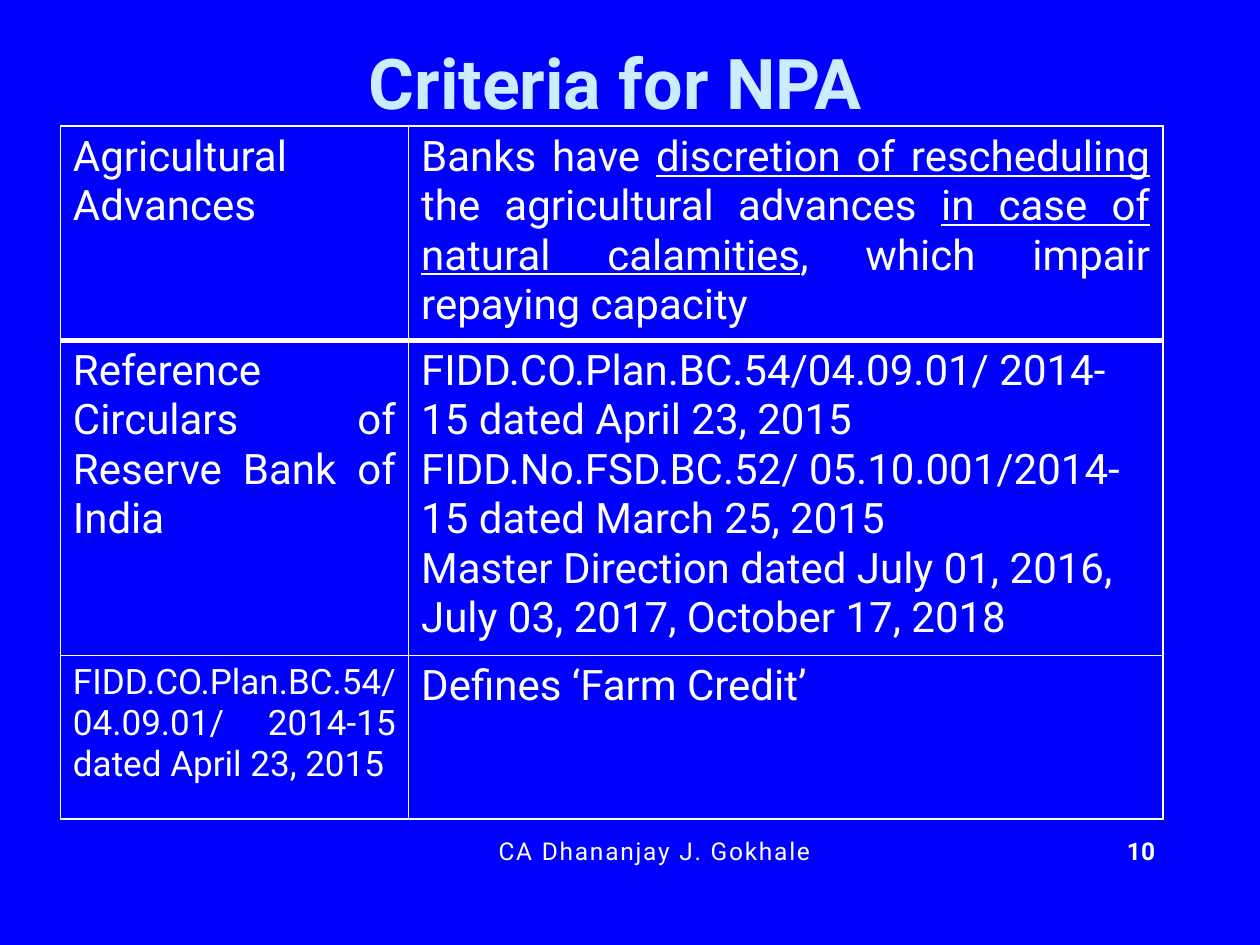
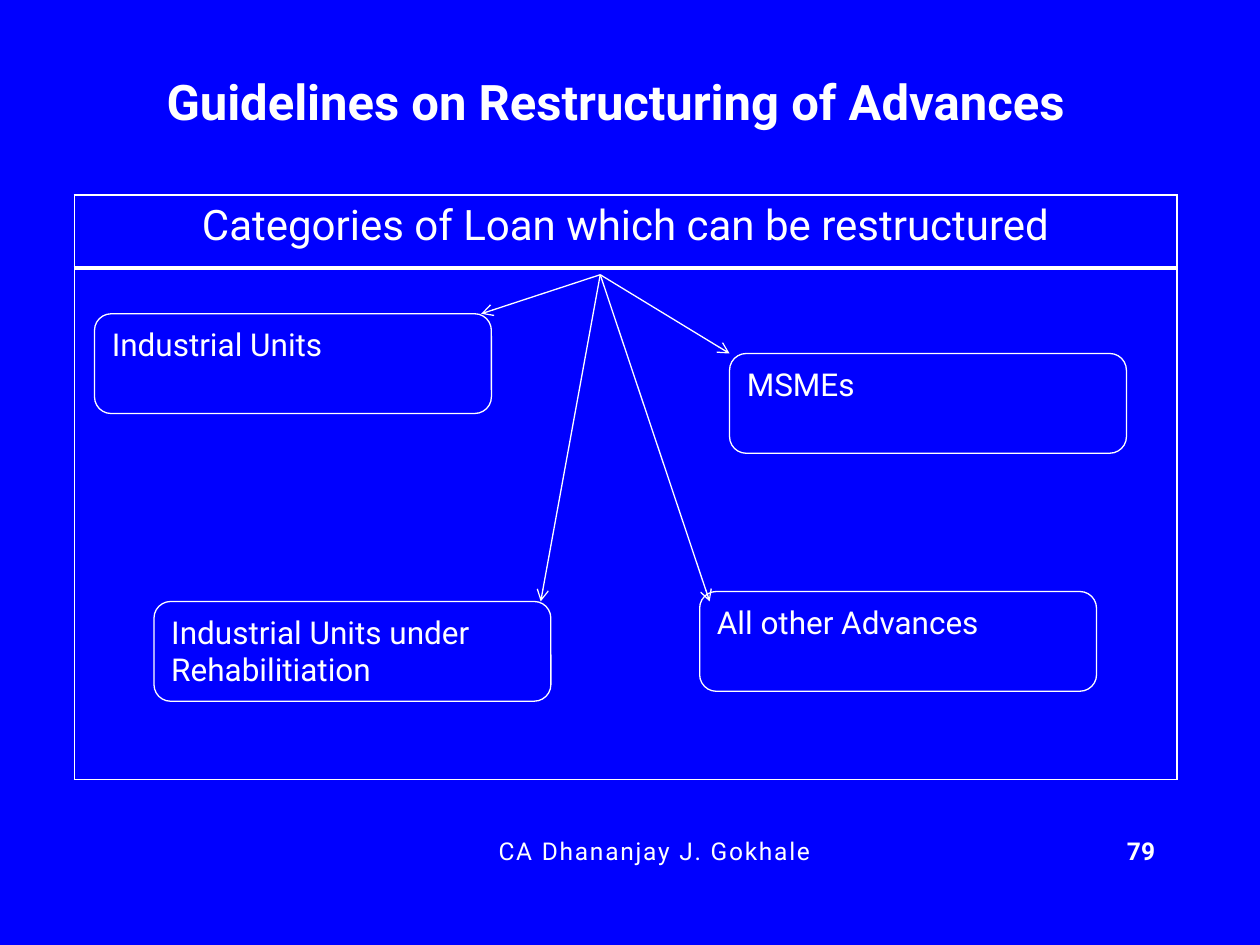
from lxml import etree
from pptx import Presentation
from pptx.dml.color import RGBColor
from pptx.enum.shapes import MSO_CONNECTOR, MSO_SHAPE
from pptx.enum.text import MSO_ANCHOR, MSO_AUTO_SIZE, PP_ALIGN
from pptx.oxml.ns import qn
from pptx.util import Pt

LEFT, CENTER, JUSTIFY = PP_ALIGN.LEFT, PP_ALIGN.CENTER, PP_ALIGN.JUSTIFY
TOP, MIDDLE = MSO_ANCHOR.TOP, MSO_ANCHOR.MIDDLE
NO_AUTOFIT = MSO_AUTO_SIZE.NONE
ROUNDED, STRAIGHT = MSO_SHAPE.ROUNDED_RECTANGLE, MSO_CONNECTOR.STRAIGHT
TITLE_ONLY = 5

FONT = "Roboto"
BLUE, WHITE, PALE = "0000FF", "FFFFFF", "CCECFF"
FOOTER = "CA Dhananjay J. Gokhale"
THIN, THICK, FINE = 1, 3, 0.75
CATEGORY_SIZE = (226.8, 57)


def color(hex_code):
    return RGBColor.from_string(hex_code)


def write(frame, paragraphs, size=24, ink=WHITE, bold=False, align=LEFT,
          anchor=TOP, spacing=0):
    """Paragraphs are strings, or lists of (text, underlined) spans."""
    frame.word_wrap = True
    frame.vertical_anchor = anchor
    for index, spans in enumerate(paragraphs):
        para = frame.paragraphs[0] if index == 0 else frame.add_paragraph()
        para.alignment = align
        if isinstance(spans, str):
            spans = [(spans, False)]
        for text, underlined in spans:
            span = para.add_run()
            span.text = text
            font = span.font
            font.name, font.size, font.bold = FONT, Pt(size), bold
            font.color.rgb = color(ink)
            if underlined:
                font.underline = True
            if spacing:
                span._r.get_or_add_rPr().set("spc", str(spacing * 100))


def add_text(page, text, left, top, width, height, **style):
    box = page.shapes.add_textbox(Pt(left), Pt(top), Pt(width), Pt(height))
    write(box.text_frame, [text], **style)


def add_page(deck, title, number, title_height, **title_style):
    """Slide with the shared title style, footer and page number."""
    page = deck.slides.add_slide(deck.slide_layouts[TITLE_ONLY])
    heading = page.shapes.title
    heading.left, heading.top = Pt(36.7), Pt(21)
    heading.width, heading.height = Pt(630), Pt(title_height)
    heading.text_frame.auto_size = NO_AUTOFIT
    write(heading.text_frame, [title], bold=True, align=CENTER, anchor=MIDDLE,
          **title_style)
    add_text(page, FOOTER, 116, 474, 516, 28, size=14, align=CENTER, spacing=1)
    add_text(page, str(number), 632, 474, 40, 30, size=14, bold=True,
             align=CENTER)
    return page


def set_borders(cell, **widths):
    properties = cell._tc.get_or_add_tcPr()
    for side in "LRTB":
        line = etree.SubElement(properties, qn(f"a:ln{side}"),
                                w=str(Pt(widths.get(side, THIN))))
        fill = etree.SubElement(line, qn("a:solidFill"))
        etree.SubElement(fill, qn("a:srgbClr"), val=WHITE)


def add_grid(page, left, top, widths, heights, rows):
    """Outlined table with a thick rule under its first row.

    Each cell is (paragraphs, text format).
    """
    frame = page.shapes.add_table(len(heights), len(widths), Pt(left), Pt(top),
                                  Pt(sum(widths)), Pt(sum(heights)))
    table = frame.table
    table.first_row = table.horz_banding = False
    for column, width in zip(table.columns, widths):
        column.width = Pt(width)
    for index, (row, height, contents) in enumerate(
            zip(table.rows, heights, rows)):
        row.height = Pt(height)
        rules = {0: {"B": THICK}, 1: {"T": THICK}}.get(index, {})
        for cell, (paragraphs, style) in zip(row.cells, contents):
            set_borders(cell, **rules)
            cell.fill.background()
            write(cell.text_frame, paragraphs, **style)


def add_category(page, text, left, top):
    width, height = CATEGORY_SIZE
    box = page.shapes.add_shape(ROUNDED, Pt(left), Pt(top), Pt(width),
                                Pt(height))
    box.shadow.inherit = False
    box.fill.background()
    box.line.color.rgb = color(WHITE)
    box.line.width = Pt(FINE)
    write(box.text_frame, [text], size=18)


def add_arrow(page, start, end):
    arrow = page.shapes.add_connector(STRAIGHT, *map(Pt, start + end))
    arrow.line.color.rgb = color(WHITE)
    arrow.line.width = Pt(FINE)
    etree.SubElement(arrow.line._get_or_add_ln(), qn("a:tailEnd"), type="arrow")
    etree.SubElement(arrow._element.spPr, qn("a:effectLst"))


def build_criteria(deck):
    page = add_page(deck, "Criteria for NPA", 10, 51, size=40, ink=PALE)
    farm_circular = "FIDD.CO.Plan.BC.54/04.09.01/ 2014-15 dated April 23, 2015"
    discretion = [
        ("Banks have ", False),
        ("discretion of rescheduling", True),
        (" the agricultural advances ", False),
        ("in case of natural calamities", True),
        (", which impair repaying capacity", False),
    ]
    circulars = [
        farm_circular,
        "FIDD.No.FSD.BC.52/ 05.10.001/2014-15 dated March 25, 2015",
        "Master Direction dated July 01, 2016, July 03, 2017, October 17, 2018",
    ]
    justified = {"align": JUSTIFY}
    add_grid(page, 34.5, 72, (199, 431), (117.5, 172, 93.5), [
        [(["Agricultural Advances"], {}), ([discretion], justified)],
        [(["Reference Circulars of Reserve Bank of India"], justified),
         (circulars, {})],
        [([farm_circular], {"size": 20, "align": JUSTIFY}),
         (["Defines ‘Farm Credit’"], justified)],
    ])


def build_restructuring(deck):
    page = add_page(deck, "Guidelines on Restructuring of Advances", 79, 73.5,
                    size=28)
    add_grid(page, 42.5, 111.5, (630,), (41.7, 292.3), [
        [(["Categories of Loan which can be restructured"],
          {"align": CENTER})],
        [([], {})],
    ])
    # Category boxes, each with the arrow tip that points at it
    origin = (343, 157)
    categories = [
        ("Industrial Units", (54, 179.3), (275, 179.3)),
        ("MSMEs", (416.9, 202), (416.9, 202)),
        ("Industrial Units under Rehabilitiation", (88, 343.7), (309, 343.7)),
        ("All other Advances", (399.8, 338), (405.5, 343.7)),
    ]
    for text, corner, tip in categories:
        add_category(page, text, *corner)
        add_arrow(page, origin, tip)


def main():
    deck = Presentation()
    deck.slide_width, deck.slide_height = Pt(720), Pt(540)
    background = deck.slide_master.background.fill
    background.solid()
    background.fore_color.rgb = color(BLUE)
    build_criteria(deck)
    build_restructuring(deck)
    deck.save("out.pptx")


if __name__ == "__main__":
    main()
